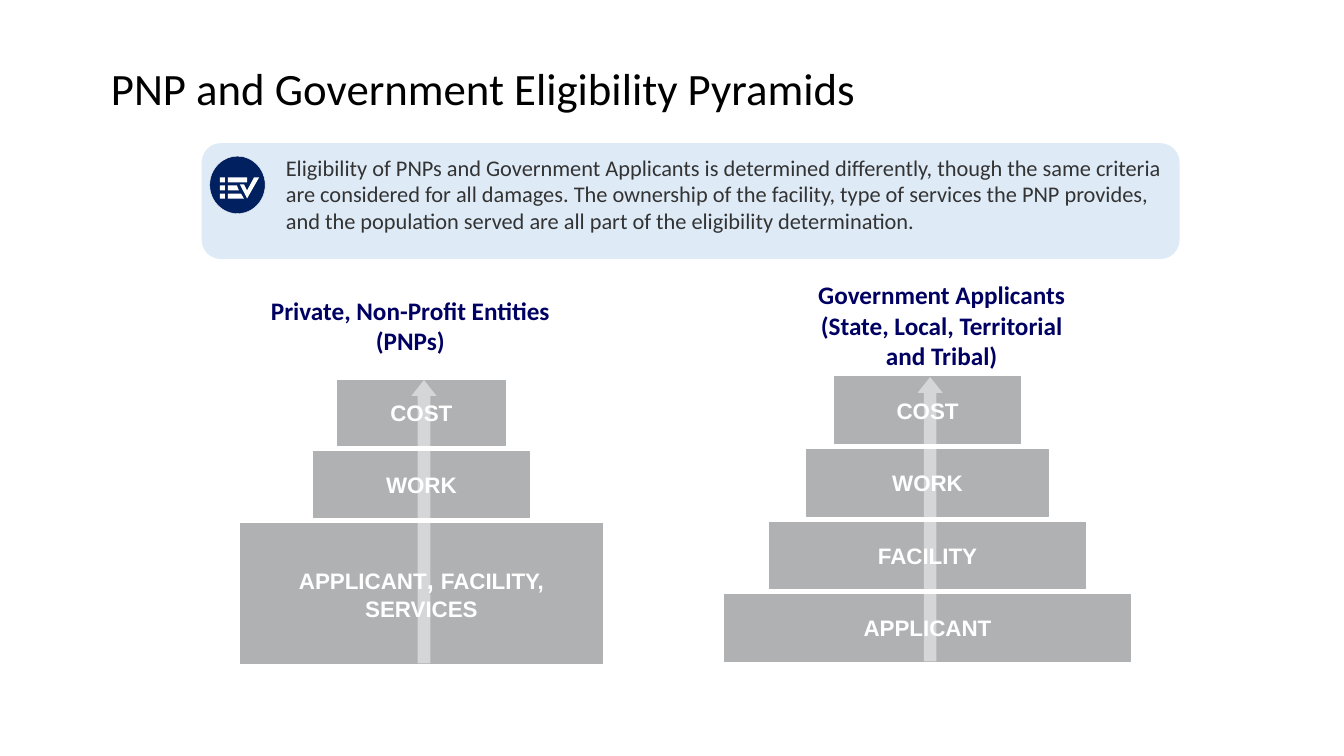
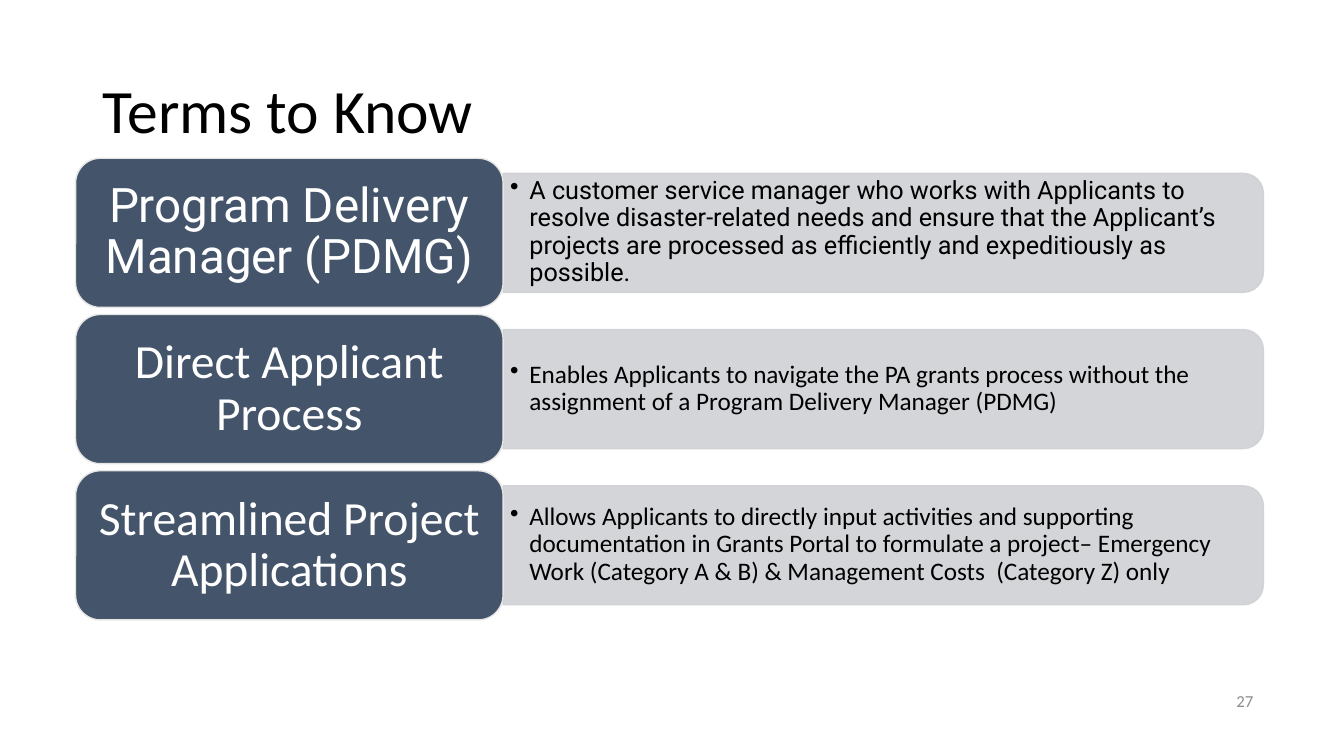
"""Builds two slides on eligibility pyramids and key programme terms."""
import lxml.etree
import pptx
import pptx.dml.color
import pptx.enum.shapes
import pptx.enum.text
import pptx.oxml.ns
import pptx.util

Inches = pptx.util.Inches
RGBColor = pptx.dml.color.RGBColor
SHAPE = pptx.enum.shapes.MSO_SHAPE
ALIGN = pptx.enum.text.PP_ALIGN
ANCHOR = pptx.enum.text.MSO_ANCHOR

BLACK = RGBColor(0x00, 0x00, 0x00)
WHITE = RGBColor(0xFF, 0xFF, 0xFF)
BODY_GREY = RGBColor(0x33, 0x33, 0x33)
NUMBER_GREY = RGBColor(0x8C, 0x8C, 0x8C)
TIER_GREY = RGBColor(0xB0, 0xB1, 0xB3)
BAR_GREY = RGBColor(0xCF, 0xD1, 0xD4)
EDGE_GREY = RGBColor(0xE7, 0xE6, 0xE6)
HEADING_BLUE = RGBColor(0x00, 0x00, 0x63)
CALLOUT_BLUE = RGBColor(0xDE, 0xEB, 0xF7)
ICON_BLUE = RGBColor(0x00, 0x20, 0x60)
TERM_SLATE = RGBColor(0x44, 0x54, 0x6A)

TIER_GAP = 0.06
HEADING_TOP, HEADING_WIDTH, HEADING_HEIGHT = 2.72, 3, 1.01
TERM_LEFT, TERM_TOP, TERM_WIDTH, TERM_HEIGHT = 0.75, 1.57, 4.24, 1.48
TERM_PITCH = 1.55
BAR_WIDTH, BAR_HEIGHT = 7.54, 1.18

PYRAMIDS = [
    (4.18, 3.77, 4.07, "Private, Non-Profit Entities (PNPs)", [
        (1.67, 0.65, [("COST", 16)]),
        (2.14, 0.65, [("WORK", 16)]),
        (3.59, 1.39, [("APPLICANT", 16), (", ", 18), ("FACILITY, SERVICES", 16)]),
    ]),
    (9.2, 3.74, 9.34, "Government Applicants (State, Local, Territorial and Tribal)", [
        (1.85, 0.66, [("COST", 16)]),
        (2.4, 0.66, [("WORK", 16)]),
        (3.14, 0.66, [("FACILITY", 16)]),
        (4.03, 0.66, [("APPLICANT", 16)]),
    ]),
]
TERMS = [
    ("Program Delivery Manager (PDMG)", "Roboto",
     "A customer service manager who works with Applicants to resolve disaster-related needs "
     "and ensure that the Applicant’s projects are processed as efficiently and expeditiously "
     "as possible."),
    ("Direct Applicant Process", "Calibri",
     "Enables Applicants to navigate the PA grants process without the assignment of a "
     "Program Delivery Manager (PDMG)"),
    ("Streamlined Project Applications", "Calibri",
     "Allows Applicants to directly input activities and supporting documentation in Grants "
     "Portal to formulate a project– Emergency Work (Category A & B) & Management Costs  "
     "(Category Z) only"),
]


def place(item, left, top, width, height):
    """Move and size an item, in inches."""
    item.left, item.top = Inches(left), Inches(top)
    item.width, item.height = Inches(width), Inches(height)


def style_paragraph(para, size, color, name="Calibri", bold=False, align=ALIGN.LEFT):
    """Set the font and alignment of a paragraph."""
    para.alignment = align
    font = para.font
    font.name, font.bold = name, bold
    font.color.rgb = color
    if size:
        font.size = pptx.util.Pt(size)


def set_frame(box, anchor, side=0.1, edge=0.05):
    """Wrap, anchor and inset the text of a box and return its frame."""
    frame = box.text_frame
    frame.word_wrap = True
    frame.auto_size = pptx.enum.text.MSO_AUTO_SIZE.NONE
    frame.vertical_anchor = anchor
    frame.margin_left = frame.margin_right = Inches(side)
    frame.margin_top = frame.margin_bottom = Inches(edge)
    return frame


def add_page(deck, title, size, area):
    """Add a slide with its title placed in an area."""
    page = deck.slides.add_slide(deck.slide_layouts[5])
    box = page.shapes.title
    place(box, *area)
    frame = set_frame(box, ANCHOR.MIDDLE)
    frame.text = title
    style_paragraph(frame.paragraphs[0], size, BLACK)
    frame.paragraphs[0].line_spacing = 0.9
    return page


def add_text(page, area, text, anchor=ANCHOR.MIDDLE, **style):
    """Add a text box holding one styled paragraph."""
    box = page.shapes.add_textbox(*map(Inches, area))
    frame = set_frame(box, anchor)
    frame.text = text
    style_paragraph(frame.paragraphs[0], **style)
    return box


def paint(shape, fill, line=None, weight=0.75):
    """Give a shape a flat fill and an optional outline."""
    shape.shadow.inherit = False
    shape.fill.solid()
    shape.fill.fore_color.rgb = fill
    if line is None:
        shape.line.fill.background()
    else:
        shape.line.color.rgb = line
        shape.line.width = pptx.util.Pt(weight)
    return shape


def add_shape(page, kind, area, fill, line=None, weight=0.75):
    """Add a painted preset shape."""
    shape = page.shapes.add_shape(kind, *map(Inches, area))
    return paint(shape, fill, line, weight)


def set_opacity(shape, percent):
    """Make the fill and outline colours of a shape translucent."""
    for color in shape._element.spPr.iter(pptx.oxml.ns.qn("a:srgbClr")):
        alpha = lxml.etree.SubElement(color, pptx.oxml.ns.qn("a:alpha"))
        alpha.set("val", str(percent * 1000))


def add_bullet(para, indent):
    """Give a paragraph a hanging round bullet."""
    settings = para._p.get_or_add_pPr()
    settings.set("marL", str(Inches(indent)))
    settings.set("indent", str(-Inches(indent)))
    lxml.etree.SubElement(settings, pptx.oxml.ns.qn("a:buChar")).set("char", "•")


def add_pyramid(page, center, top, heading_center, heading, tiers):
    """Add a heading, stacked tiers and the arrow that rises through them."""
    add_text(page, (heading_center - HEADING_WIDTH / 2, HEADING_TOP, HEADING_WIDTH, HEADING_HEIGHT),
             heading, size=18, color=HEADING_BLUE, bold=True, align=ALIGN.CENTER)
    tier_top = top
    for width, height, spans in tiers:
        tier = add_shape(page, SHAPE.RECTANGLE, (center - width / 2, tier_top, width, height),
                         TIER_GREY, TIER_GREY)
        para = set_frame(tier, ANCHOR.MIDDLE, side=0.15).paragraphs[0]
        style_paragraph(para, None, WHITE, "Arial", True, ALIGN.CENTER)
        for text, size in spans:
            span = para.add_run()
            span.text = text
            span.font.size = pptx.util.Pt(size)
        tier_top += height + TIER_GAP
    arrow = add_shape(page, SHAPE.UP_ARROW, (center - 0.1, top, 0.25, tier_top - TIER_GAP - top), WHITE)
    arrow.adjustments[1] = 0.63
    set_opacity(arrow, 48)


def add_checklist_icon(page):
    """Add a round icon with three list rows and a tick."""
    add_shape(page, SHAPE.OVAL, (2.08, 1.55, 0.55, 0.57), ICON_BLUE, WHITE, 0.25)
    outlines = [[(2.52, 1.76), (2.57, 1.76), (2.45, 1.97), (2.38, 1.83), (2.42, 1.83), (2.45, 1.89)]]
    for row, (upper, lower) in enumerate([(2.45, 2.45), (2.35, 2.37), (2.39, 2.42)]):
        top = 1.76 + 0.08 * row
        bottom = top + 0.05
        outlines.append([(2.18, top), (2.23, top), (2.23, bottom), (2.18, bottom)])
        outlines.append([(2.26, top), (upper, top), (lower, bottom), (2.26, bottom)])
    contours = [[(Inches(x), Inches(y)) for x, y in outline] for outline in outlines]
    builder = page.shapes.build_freeform(*contours[0][0])
    for contour in contours:
        builder.move_to(*contour[0])
        builder.add_line_segments(contour[1:], close=True)
    paint(builder.convert_to_shape(), WHITE)


def add_callout(page, text):
    """Add the rounded summary panel with its icon."""
    panel = add_shape(page, SHAPE.ROUNDED_RECTANGLE, (2, 1.42, 9.7, 1.15), CALLOUT_BLUE)
    frame = set_frame(panel, ANCHOR.TOP)
    frame.margin_left = Inches(0.78)
    frame.text = text
    style_paragraph(frame.paragraphs[0], 16, BODY_GREY)
    add_checklist_icon(page)


def add_term(page, top, term, font_name, meaning):
    """Add a term card and the bar with its meaning."""
    middle = top + TERM_HEIGHT / 2
    bar_left = TERM_LEFT + TERM_WIDTH
    bar = add_shape(page, SHAPE.ROUND_2_SAME_RECTANGLE,
                    (bar_left + (BAR_WIDTH - BAR_HEIGHT) / 2, middle - BAR_WIDTH / 2,
                     BAR_HEIGHT, BAR_WIDTH), BAR_GREY, BAR_GREY, 1)
    bar.rotation = 90
    set_opacity(bar, 90)

    box = page.shapes.add_textbox(*map(Inches, (bar_left, middle - 0.54, 7.48, 1.07)))
    frame = set_frame(box, ANCHOR.MIDDLE, 0.07, 0.04)
    frame.text = meaning
    para = frame.paragraphs[0]
    add_bullet(para, 0.19)
    style_paragraph(para, 18, BLACK, font_name)
    para.line_spacing = 0.9

    card = add_shape(page, SHAPE.ROUNDED_RECTANGLE, (TERM_LEFT, top, TERM_WIDTH, TERM_HEIGHT),
                     TERM_SLATE, EDGE_GREY, 1)
    frame = set_frame(card, ANCHOR.MIDDLE, 0.14, 0.07)
    frame.text = term
    style_paragraph(frame.paragraphs[0], 34, WHITE, font_name, align=ALIGN.CENTER)
    frame.paragraphs[0].line_spacing = 0.9


def main():
    """Build and save the deck."""
    deck = pptx.Presentation()
    deck.slide_width, deck.slide_height = Inches(13.33), Inches(7.5)

    page = add_page(deck, "PNP and Government Eligibility Pyramids", 32, (1, 0.33, 8.97, 1.15))
    add_callout(page, "Eligibility of PNPs and Government Applicants is determined differently, "
                      "though the same criteria are considered for all damages. The ownership of "
                      "the facility, type of services the PNP provides, and the population served "
                      "are all part of the eligibility determination.")
    for pyramid in PYRAMIDS:
        add_pyramid(page, *pyramid)

    page = add_page(deck, "Terms to Know", 44, (0.92, 0.4, 11.5, 1.45))
    for index, term in enumerate(TERMS):
        add_term(page, TERM_TOP + TERM_PITCH * index, *term)
    add_text(page, (11.53, 6.75, 1, 0.4), "27", size=12, color=NUMBER_GREY, align=ALIGN.RIGHT)

    deck.save("out.pptx")


if __name__ == "__main__":
    main()
